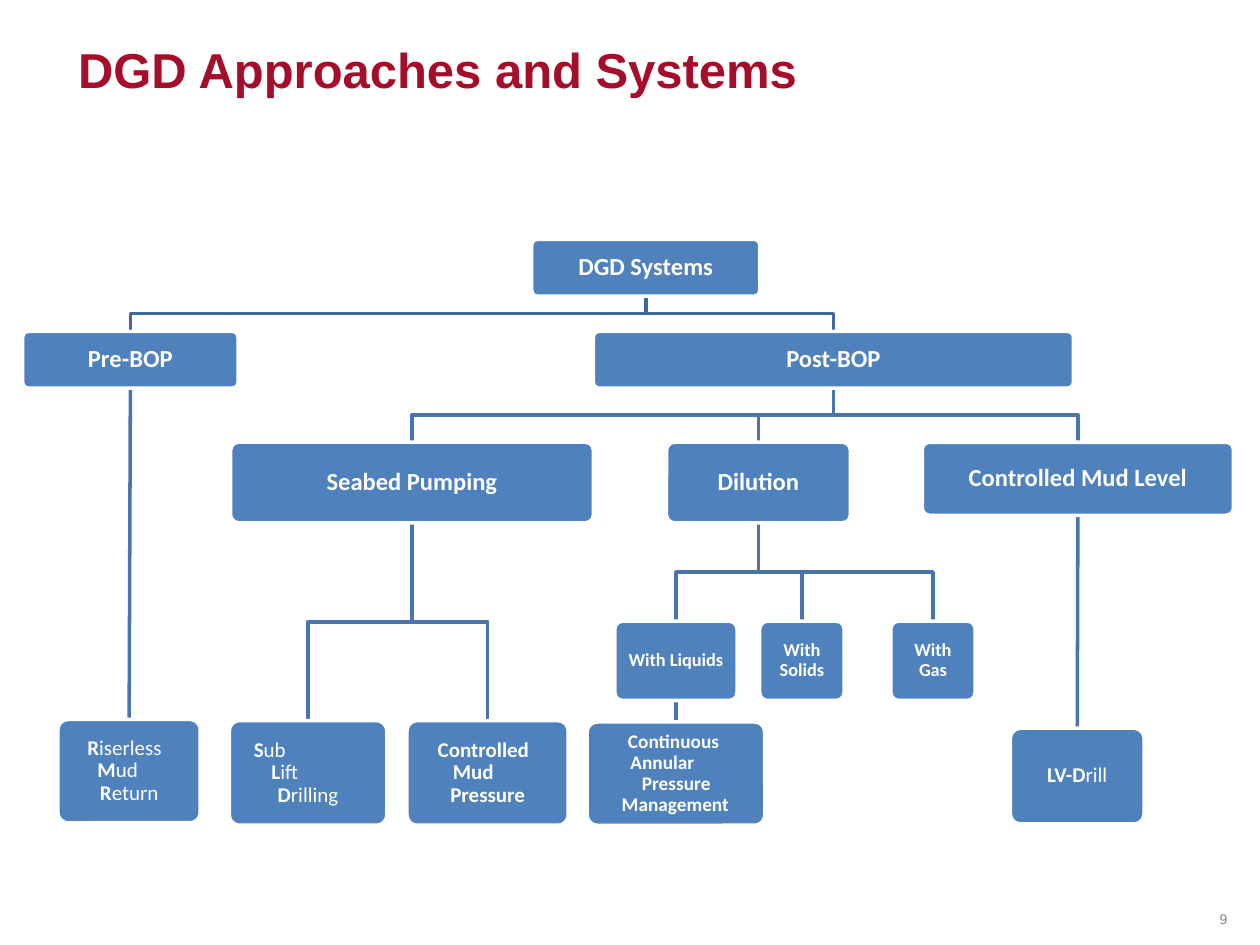
from dataclasses import dataclass

from lxml import etree
from pptx import Presentation
from pptx.dml.color import RGBColor
from pptx.enum.shapes import MSO_CONNECTOR, MSO_SHAPE
from pptx.enum.text import MSO_ANCHOR, PP_ALIGN
from pptx.oxml.ns import qn
from pptx.util import Inches, Pt

ROUNDED, STRAIGHT = MSO_SHAPE.ROUNDED_RECTANGLE, MSO_CONNECTOR.STRAIGHT
MIDDLE, BOTTOM = MSO_ANCHOR.MIDDLE, MSO_ANCHOR.BOTTOM
LEFT, CENTER, RIGHT = PP_ALIGN.LEFT, PP_ALIGN.CENTER, PP_ALIGN.RIGHT
MARGINS = ("margin_left", "margin_top", "margin_right", "margin_bottom")


@dataclass(frozen=True)
class Theme:
    title: str = "A50E2B"
    number: str = "808080"
    box: str = "4F81BD"
    white: str = "FFFFFF"
    top_link: str = "3F6797"
    link: str = "4875AC"
    heading_font: str = "Arial"
    body_font: str = "Calibri"
    title_size: float = 28
    number_size: float = 8
    branch_size: float = 14
    system_size: float = 12
    long_size: float = 11
    fluid_size: float = 10.5
    line: float = 2


T = Theme()

# name: (parent, (left, top, width, height), text size, lines)
# A line is its text, or (indent, text); text after "|" is not bold.
NODES = {
    "root": (None, (4.22, 1.9, 1.81, 0.45), T.branch_size, ["DGD Systems"]),
    "pre": ("root", (0.18, 2.63, 1.71, 0.45), T.branch_size, ["Pre-BOP"]),
    "post": ("root", (4.71, 2.63, 3.81, 0.45), T.branch_size, ["Post-BOP"]),
    "seabed": ("post", (1.83, 3.51, 2.88, 0.64), T.branch_size, ["Seabed Pumping"]),
    "dilution": ("post", (5.29, 3.51, 1.46, 0.64), T.branch_size, ["Dilution"]),
    "level": ("post", (7.32, 3.51, 2.47, 0.58), T.branch_size, ["Controlled Mud Level"]),
    "liquids": ("dilution", (4.88, 4.93, 0.97, 0.63), T.fluid_size, ["With Liquids"]),
    "solids": ("dilution", (6.03, 4.93, 0.67, 0.63), T.fluid_size, ["With Solids"]),
    "gas": ("dilution", (7.07, 4.93, 0.67, 0.63), T.fluid_size, ["With Gas"]),
    "riserless": ("pre", (0.46, 5.71, 1.13, 0.82), T.system_size,
                  [(0.16, "R|iserless"), (0.24, "M|ud"), (0.26, "R|eturn")]),
    "sub lift": ("seabed", (1.82, 5.72, 1.25, 0.83), T.system_size,
                 [(0.12, "S|ub"), (0.26, "L|ift"), (0.31, "D|rilling")]),
    "mud pressure": ("seabed", (3.23, 5.72, 1.28, 0.83), T.system_size,
                     [(0.17, "Controlled"), (0.29, "Mud"), (0.27, "Pressure")]),
    "annular": ("liquids", (4.66, 5.73, 1.41, 0.82), T.long_size,
                [(0.25, "Continuous"), (0.27, "Annular"),
                 (0.36, "Pressure"), (0.2, "Management")]),
    "drill": ("level", (8.02, 5.78, 1.06, 0.76), T.system_size, ["LV-D|rill"]),
}


def add_run(p, text, size, font, color, bold=False):
    r = p.add_run()
    r.text = text
    for name, value in {"name": font, "size": Pt(size), "bold": bold}.items():
        setattr(r.font, name, value)
    r.font.color.rgb = RGBColor.from_string(color)


def add_title(slide, text):
    sp = slide.shapes.title
    place = {"left": 0.52, "top": 0.17, "width": 9.05, "height": 0.83}
    for name, value in place.items():
        setattr(sp, name, Inches(value))
    sp.text_frame.vertical_anchor = MIDDLE
    p = sp.text_frame.paragraphs[0]
    p.alignment, p.line_spacing = LEFT, 0.85
    add_run(p, text, T.title_size, T.heading_font, T.title, True)


def add_page_number(slide, text):
    sp = slide.shapes.add_textbox(*map(Inches, (7.76, 6.91, 2.08, 0.5)))
    tf = sp.text_frame
    tf.word_wrap, tf.vertical_anchor = True, BOTTOM
    p = tf.paragraphs[0]
    p.alignment = RIGHT
    add_run(p, text, T.number_size, T.heading_font, T.number)


def add_box(slide, at, size, lines):
    sp = slide.shapes.add_shape(ROUNDED, *map(Inches, at))
    sp.shadow.inherit = False
    sp.adjustments[0] = 0.1
    sp.fill.solid()
    sp.fill.fore_color.rgb = RGBColor.from_string(T.box)
    sp.line.color.rgb = RGBColor.from_string(T.white)
    sp.line.width = Pt(T.line)

    tf = sp.text_frame
    tf.word_wrap, tf.vertical_anchor = True, MIDDLE
    for margin in MARGINS:
        setattr(tf, margin, Inches(0.05))
    for i, line in enumerate(lines):
        p = tf.add_paragraph() if i else tf.paragraphs[0]
        p.alignment, p.line_spacing = CENTER, 0.9
        text = line
        if isinstance(line, tuple):
            indent, text = line
            p.alignment = LEFT
            p._p.get_or_add_pPr().set("marL", str(Inches(indent)))
        strong, _, light = text.partition("|")
        add_run(p, strong, size, T.body_font, T.white, True)
        if light:
            add_run(p, light, size, T.body_font, T.white)


def add_link(slide, parent, child, color):
    """Join the bottom centre of the parent to the top centre of the child."""
    x1, y1 = parent[0] + parent[2] / 2, parent[1] + parent[3]
    x2, y2 = child[0] + child[2] / 2, child[1]
    if abs(x1 - x2) < 0.02:
        sp = slide.shapes.add_connector(STRAIGHT, *map(Inches, (x1, y1, x2, y2)))
        etree.SubElement(sp._element.spPr, qn("a:effectLst"))
    else:
        middle = (y1 + y2) / 2
        elbow = [(x1, middle), (x2, middle), (x2, y2)]
        builder = slide.shapes.build_freeform(Inches(x1), Inches(y1))
        builder.add_line_segments(
            [(Inches(x), Inches(y)) for x, y in elbow], close=False)
        sp = builder.convert_to_shape()
        sp.shadow.inherit = False
        sp.fill.background()
    sp.line.color.rgb = RGBColor.from_string(color)
    sp.line.width = Pt(T.line)


def main():
    prs = Presentation()
    prs.slide_width, prs.slide_height = Inches(10), Inches(7.5)
    slide = prs.slides.add_slide(prs.slide_layouts[5])

    # Title and page number
    add_title(slide, "DGD Approaches and Systems")
    add_page_number(slide, "9")

    # Links first, so that the white box outlines trim their ends
    for parent, at, _, _ in NODES.values():
        if parent:
            color = T.top_link if parent == "root" else T.link
            add_link(slide, NODES[parent][1], at, color)

    # Boxes of the tree
    for _, at, size, lines in NODES.values():
        add_box(slide, at, size, lines)

    prs.save("out.pptx")


if __name__ == "__main__":
    main()
